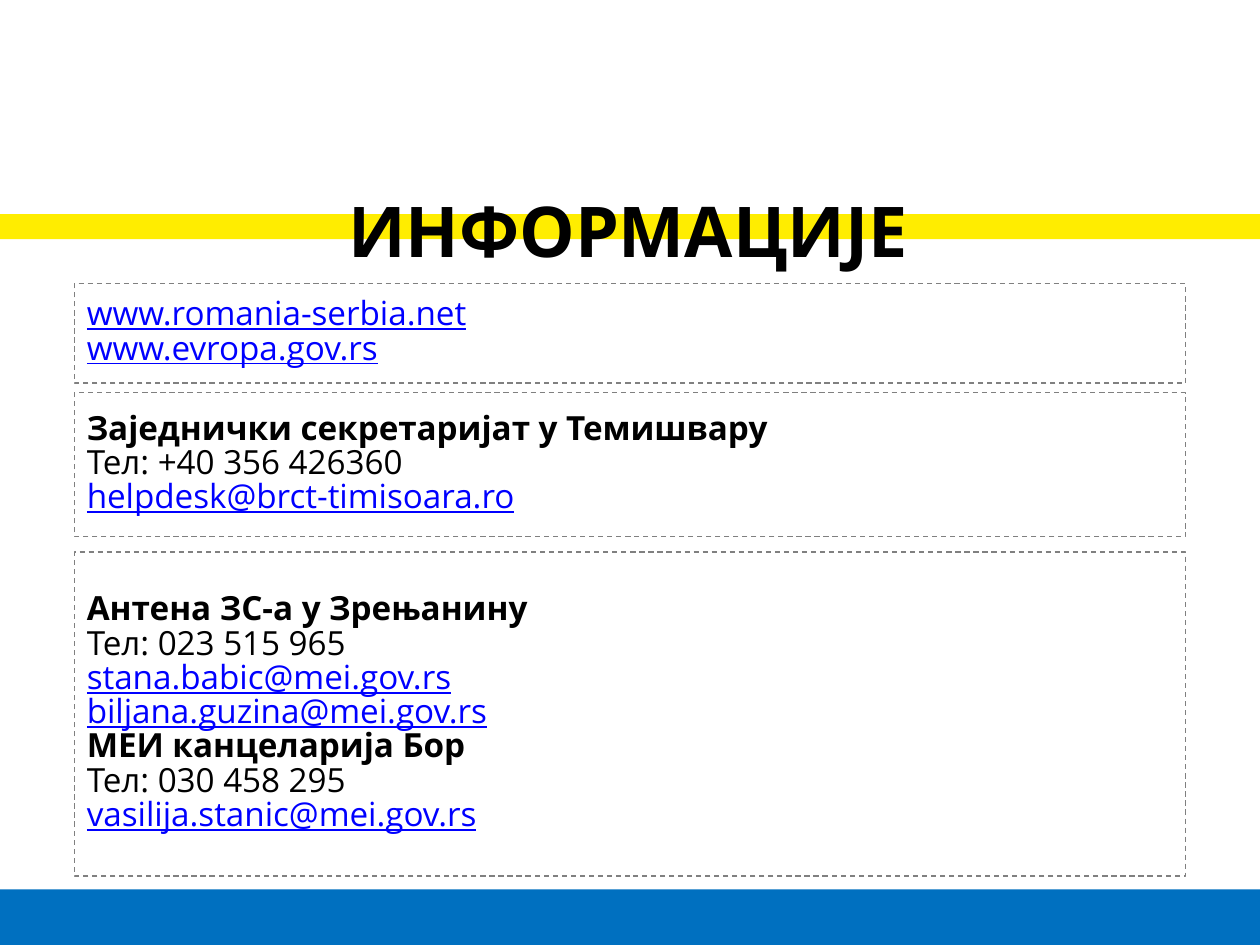
from pptx import Presentation
from pptx.dml.color import RGBColor
from pptx.enum.dml import MSO_LINE
from pptx.enum.shapes import MSO_SHAPE
from pptx.enum.text import MSO_ANCHOR, PP_ALIGN
from pptx.util import Cm, Pt

RECTANGLE = MSO_SHAPE.RECTANGLE
DASH = MSO_LINE.DASH
MIDDLE = MSO_ANCHOR.MIDDLE
LEFT, CENTER = PP_ALIGN.LEFT, PP_ALIGN.CENTER

BLACK = RGBColor(0x00, 0x00, 0x00)
GRAY = RGBColor(0x80, 0x80, 0x80)
BLUE = RGBColor(0x00, 0x70, 0xC0)
YELLOW = RGBColor(0xFF, 0xED, 0x00)
LINK_BLUE = RGBColor(0x00, 0x00, 0xFF)

FONT = "Open Sans"
PAGE_WIDTH, PAGE_HEIGHT = 25.4, 19.05
PANEL_LEFT, PANEL_WIDTH = 1.5, 22.4

HEADING = {"bold": True}
LINK = {"color": LINK_BLUE, "underline": True}
PLAIN = {}

# Top and height in centimetres, then the lines with their formats
PANELS = [
    (5.72, 2.0, [
        ("www.romania-serbia.net", LINK),
        ("www.evropa.gov.rs", LINK),
    ]),
    (7.92, 2.9, [
        ("Заједнички секретаријат у Темишвару", HEADING),
        ("Тел: +40 356 426360", PLAIN),
        ("helpdesk@brct-timisoara.ro", LINK),
    ]),
    (11.13, 6.53, [
        ("Антена ЗС-а у Зрењанину", HEADING),
        ("Тел: 023 515 965", PLAIN),
        ("stana.babic@mei.gov.rs", LINK),
        ("biljana.guzina@mei.gov.rs", LINK),
        ("МЕИ канцеларија Бор", HEADING),
        ("Тел: 030 458 295", PLAIN),
        ("vasilija.stanic@mei.gov.rs", LINK),
    ]),
]


def write_text(para, text, size=19, color=BLACK, bold=False, underline=False, align=LEFT):
    para.alignment = align
    span = para.add_run()
    span.text = text
    font = span.font
    font.name = FONT
    font.size = Pt(size)
    font.bold = bold
    font.underline = underline
    font.color.rgb = color


def add_rectangle(page, left, top, width, height):
    box = page.shapes.add_shape(RECTANGLE, Cm(left), Cm(top), Cm(width), Cm(height))
    box.shadow.inherit = False
    return box


def add_band(page, top, height, color):
    """Add a filled band across the full page width."""
    band = add_rectangle(page, 0, top, PAGE_WIDTH, height)
    band.fill.solid()
    band.fill.fore_color.rgb = color
    band.line.fill.background()


def add_title(page, left, top, width, height, text):
    box = page.shapes.add_textbox(Cm(left), Cm(top), Cm(width), Cm(height))
    frame = box.text_frame
    frame.word_wrap = True
    frame.vertical_anchor = MIDDLE
    write_text(frame.paragraphs[0], text, size=40, bold=True, align=CENTER)


def add_contact_panel(page, left, top, width, height, lines):
    """Add a dashed panel with one paragraph for each line."""
    panel = add_rectangle(page, left, top, width, height)
    panel.fill.background()
    panel.line.color.rgb = GRAY
    panel.line.width = Pt(0.75)
    panel.line.dash_style = DASH
    frame = panel.text_frame
    frame.word_wrap = True
    frame.vertical_anchor = MIDDLE
    for index, (text, style) in enumerate(lines):
        para = frame.add_paragraph() if index else frame.paragraphs[0]
        para.line_spacing = 0.8
        para.space_before = Pt(1.4 if index else 0)
        write_text(para, text, **style)


def main():
    deck = Presentation()
    deck.slide_width, deck.slide_height = Cm(PAGE_WIDTH), Cm(PAGE_HEIGHT)
    page = deck.slides.add_slide(deck.slide_layouts[6])
    footer_height = 1.12
    add_band(page, PAGE_HEIGHT - footer_height, footer_height, BLUE)
    add_band(page, 4.32, 0.5, YELLOW)
    add_title(page, 2.46, 3.76, 20.4, 1.75, "ИНФОРМАЦИЈЕ")
    for top, height, lines in PANELS:
        add_contact_panel(page, PANEL_LEFT, top, PANEL_WIDTH, height, lines)
    deck.save("out.pptx")


if __name__ == "__main__":
    main()
